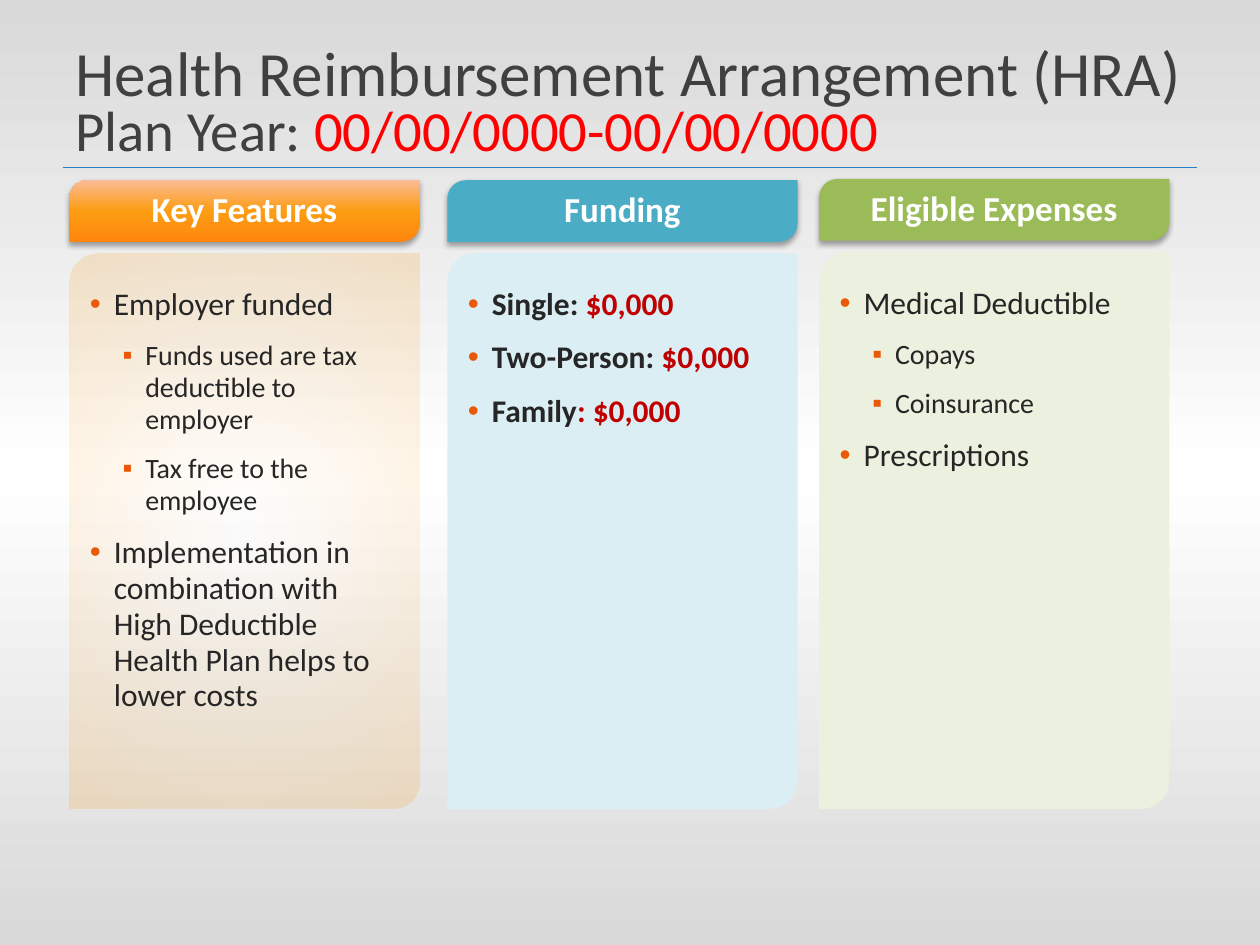
"""Build the Health Reimbursement Arrangement plan slide."""
from dataclasses import dataclass

from lxml import etree
from pptx import Presentation
from pptx import util as u
from pptx.dml.color import RGBColor
from pptx.enum import shapes, text
from pptx.oxml import parse_xml
from pptx.oxml.ns import nsdecls, qn


@dataclass(frozen=True)
class Theme:
    """Colours, type sizes and font of the slide."""
    font: str = "Calibri"
    title: str = "404040"
    dates: str = "FF0000"
    rule: str = "2780C8"
    ink: str = "262626"
    amount: str = "C00000"
    bullet: str = "EA5907"
    white: str = "FFFFFF"
    grey: str = "D9D9D9"
    title_size: float = 36
    year_size: float = 32.4
    heading_size: float = 20
    level_sizes: tuple[float, ...] = (18, 16)


@dataclass(frozen=True)
class Stop:
    """One gradient stop, in percent."""
    position: int
    color: str
    alpha: int = 100


@dataclass(frozen=True)
class Gradient:
    """A bottom-to-top gradient, or one spreading from the centre."""
    stops: tuple[Stop, ...]
    radial: bool = False


@dataclass(frozen=True)
class Piece:
    """A run of text in one style."""
    words: str
    color: str
    size: float
    bold: bool = False


@dataclass(frozen=True)
class Item:
    """A bulleted point and its level."""
    pieces: tuple[Piece, ...]
    level: int = 0


@dataclass(frozen=True)
class Level:
    """Bullet mark and indents of a list level."""
    mark: str
    margin: float
    hanging: float


@dataclass(frozen=True)
class Column:
    """A heading tab with a panel of points below it."""
    heading: str
    left: float
    top: float
    tab_fill: str | Gradient
    panel_fill: str | Gradient
    items: tuple[Item, ...]


THEME = Theme()
WIDTH, HEIGHT = 10, 7.5
MARGIN = 0.05 * WIDTH
COLUMN_WIDTH, TAB_HEIGHT = 2.78, 0.49
PANEL_DROP, PANEL_BOTTOM = 0.58, 6.42
RULE_Y = 1.33
LEVELS = (Level("•", 0.19, 0.19), Level("▪", 0.44, 0.18))


def point(words: str, level: int = 0) -> Item:
    """Return a plain point."""
    return Item((Piece(words, THEME.ink, THEME.level_sizes[level]),), level)


def funding(label: str, amount: str) -> Item:
    """Return a bold point with its amount picked out."""
    size = THEME.level_sizes[0]
    return Item((Piece(label, THEME.ink, size, True), Piece(amount, THEME.amount, size, True)))


COLUMNS = (
    Column("Key Features", 0.55, 1.43,
           Gradient((Stop(0, "FF870F"), Stop(50, "FC9D12"), Stop(100, "FCBB97"))),
           Gradient((Stop(0, "FC9D12", 0), Stop(100, "FC9D12", 19)), radial=True),
           (point("Employer funded"),
            point("Funds used are tax deductible to employer", 1),
            point("Tax free to the employee", 1),
            point("Implementation in combination with High Deductible "
                  "Health Plan helps to lower costs"))),
    Column("Funding", 3.55, 1.43, "4BACC6", "DBEEF4",
           (funding("Single: ", "$0,000"),
            funding("Two-Person: ", "$0,000"),
            funding("Family", ": $0,000"))),
    Column("Eligible Expenses", 6.5, 1.42, "9BBB59", "EBF1DE",
           (point("Medical Deductible"), point("Copays", 1),
            point("Coinsurance", 1), point("Prescriptions"))),
)


def paint(shape, fill: str | Gradient) -> None:
    """Fill a shape with a colour or a gradient."""
    if isinstance(fill, str):
        shape.fill.solid()
        shape.fill.fore_color.rgb = RGBColor.from_string(fill)
        return
    stops = "".join(
        f'<a:gs pos="{s.position * 1000}"><a:srgbClr val="{s.color}">'
        f'<a:alpha val="{s.alpha * 1000}"/></a:srgbClr></a:gs>' for s in fill.stops)
    spread = ('<a:path path="circle"><a:fillToRect l="50000" t="50000" r="50000" b="50000"/></a:path>'
              if fill.radial else '<a:lin ang="16200000" scaled="0"/>')
    shape.fill.background()
    properties = shape._element.spPr
    properties.replace(properties.find(qn("a:noFill")), parse_xml(
        f'<a:gradFill {nsdecls("a")} rotWithShape="1"><a:gsLst>{stops}</a:gsLst>{spread}</a:gradFill>'))


def add_block(slide, kind, left: float, top: float, width: float, height: float, fill):
    """Add an unoutlined, unshadowed shape."""
    block = slide.shapes.add_shape(kind, *map(u.Inches, (left, top, width, height)))
    block.shadow.inherit = False
    block.line.fill.background()
    paint(block, fill)
    return block


def cast_shadow(shape) -> None:
    """Give a shape a soft shadow below it."""
    shape._element.spPr.find(qn("a:effectLst")).append(parse_xml(
        f'<a:outerShdw {nsdecls("a")} blurRad="{u.Pt(3.1)}" dist="{u.Pt(1.8)}" dir="5400000" '
        'rotWithShape="0"><a:srgbClr val="000000"><a:alpha val="35000"/></a:srgbClr></a:outerShdw>'))


def set_frame(shape, anchor, insets: tuple[float, float, float, float]):
    """Wrap and anchor the text of a shape and return its frame."""
    frame = shape.text_frame
    frame.word_wrap = True
    frame.vertical_anchor = anchor
    frame.margin_left, frame.margin_top, frame.margin_right, frame.margin_bottom = map(u.Inches, insets)
    return frame


def write(paragraph, piece: Piece) -> None:
    """Add one styled run to a paragraph."""
    run = paragraph.add_run()
    run.text = piece.words
    run.font.name, run.font.size, run.font.bold = THEME.font, u.Pt(piece.size), piece.bold
    run.font.color.rgb = RGBColor.from_string(piece.color)


def set_bullet(paragraph, level: int) -> None:
    """Give a paragraph the bullet and indents of its level."""
    style = LEVELS[level]
    paragraph.level = level
    properties = paragraph._p.get_or_add_pPr()
    properties.set("marL", str(u.Inches(style.margin)))
    properties.set("indent", str(-u.Inches(style.hanging)))
    color = etree.SubElement(properties, qn("a:buClr"))
    etree.SubElement(color, qn("a:srgbClr"), val=THEME.bullet)
    etree.SubElement(properties, qn("a:buFont"), typeface="Arial")
    etree.SubElement(properties, qn("a:buChar"), char=style.mark)


def add_title(slide) -> None:
    """Add the two-line title and the rule under it."""
    box = slide.shapes.add_textbox(*map(u.Inches, (MARGIN, 0.09, WIDTH - 2 * MARGIN, 1.25)))
    line = set_frame(box, text.MSO_ANCHOR.BOTTOM, (0.1, 0.05, 0.1, 0.05)).paragraphs[0]
    line.line_spacing = 0.8
    write(line, Piece("Health Reimbursement Arrangement (HRA)", THEME.title, THEME.title_size))
    line.add_line_break()
    write(line, Piece("Plan Year: ", THEME.title, THEME.year_size))
    write(line, Piece("00/00/0000-00/00/0000", THEME.dates, THEME.year_size))
    rule = slide.shapes.add_connector(
        shapes.MSO_CONNECTOR.STRAIGHT, *map(u.Inches, (MARGIN, RULE_Y, WIDTH - MARGIN, RULE_Y)))
    rule.line.color.rgb = RGBColor.from_string(THEME.rule)
    rule.line.width = u.Pt(0.5)
    etree.SubElement(rule._element.spPr, qn("a:effectLst"))


def add_column(slide, column: Column) -> None:
    """Add a heading tab and its panel of points."""
    kind = shapes.MSO_SHAPE.ROUND_2_DIAG_RECTANGLE
    tab = add_block(slide, kind, column.left, column.top, COLUMN_WIDTH, TAB_HEIGHT, column.tab_fill)
    tab.adjustments[0] = 0.3
    cast_shadow(tab)
    heading = set_frame(tab, text.MSO_ANCHOR.MIDDLE, (0, 0.05, 0, 0.05)).paragraphs[0]
    heading.alignment, heading.line_spacing = text.PP_ALIGN.CENTER, 0.9
    write(heading, Piece(column.heading, THEME.white, THEME.heading_size, True))

    top = column.top + PANEL_DROP
    panel = add_block(slide, kind, column.left, top, COLUMN_WIDTH, PANEL_BOTTOM - top, column.panel_fill)
    panel.adjustments[0] = 0.08
    frame = set_frame(panel, text.MSO_ANCHOR.TOP, (0.1, 0.2, 0.1, 0.05))
    for index, item in enumerate(column.items):
        paragraph = frame.add_paragraph() if index else frame.paragraphs[0]
        set_bullet(paragraph, item.level)
        paragraph.alignment, paragraph.line_spacing = text.PP_ALIGN.LEFT, 0.95
        paragraph.space_before = u.Pt(10 if index else 0)
        for piece in item.pieces:
            write(paragraph, piece)


def main() -> None:
    """Build and save the slide."""
    deck = Presentation()
    deck.slide_width, deck.slide_height = u.Inches(WIDTH), u.Inches(HEIGHT)
    slide = deck.slides.add_slide(deck.slide_layouts[6])
    add_block(slide, shapes.MSO_SHAPE.RECTANGLE, 0, 0, WIDTH, HEIGHT,
              Gradient((Stop(0, THEME.grey), Stop(50, THEME.white), Stop(100, THEME.grey))))
    add_title(slide)
    for column in COLUMNS:
        add_column(slide, column)
    deck.save("out.pptx")


if __name__ == "__main__":
    main()
